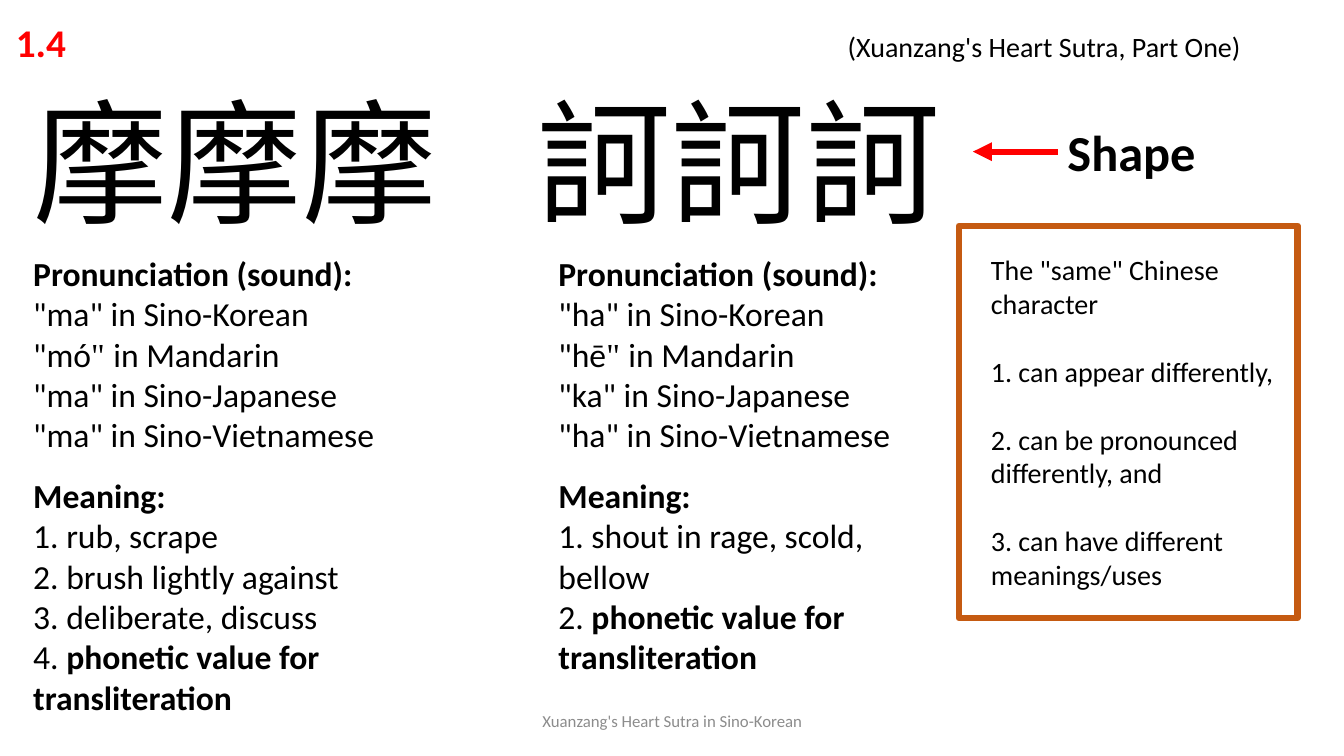
import pptx
import pptx.util
import pptx.dml.color
import pptx.enum.dml
import pptx.enum.shapes
import pptx.enum.text
import pptx.oxml
import pptx.oxml.ns
from dataclasses import dataclass

WIDTH, HEIGHT = pptx.util.Inches(13.33), pptx.util.Inches(7.5)


@dataclass(frozen=True)
class Theme:
    ink: str = "000000"
    red: str = "FF0000"
    frame: str = "C55A11"
    footer: str = "8C8C8C"
    font: str = "Calibri"
    accent_font: str = "Times New Roman"
    traditional_font: str = "Noto Sans CJK TC"
    japanese_font: str = "Noto Sans CJK JP"
    glyph_size: int = 96
    label_size: int = 36
    number_size: int = 28
    body_size: int = 24
    note_size: int = 20
    footer_size: int = 12
    stroke: float = 4.5


THEME = Theme()

# Left edges and top shared by the text columns, in percent of the slide
LEFT_COLUMN, MIDDLE_COLUMN, NOTE_COLUMN = 1.73, 40.81, 72.99
BODY_TOP = 32.8


def across(share):
    return round(WIDTH * share / 100)


def down(share):
    return round(HEIGHT * share / 100)


def area(left, top, width, height):
    return across(left), down(top), across(width), down(height)


def colour(value):
    return pptx.dml.color.RGBColor.from_string(value)


def add_run(paragraph, text, size, font=THEME.font, ink=THEME.ink, bold=False):
    run = paragraph.add_run()
    run.text = text
    run.font.name = font
    run.font.size = pptx.util.Pt(size)
    run.font.bold = bold
    run.font.color.rgb = colour(ink)


def add_text_area(slide, place, grow=True):
    box = slide.shapes.add_textbox(*area(*place))
    box.text_frame.word_wrap = True
    if grow:
        box.text_frame.auto_size = pptx.enum.text.MSO_AUTO_SIZE.SHAPE_TO_FIT_TEXT
    return box


def add_tab_stop(paragraph, inches):
    properties = paragraph._p.get_or_add_pPr()
    stops = pptx.oxml.parse_xml(
        f'<a:tabLst {pptx.oxml.ns.nsdecls("a")}>'
        f'<a:tab pos="{pptx.util.Inches(inches)}" algn="l"/></a:tabLst>')
    properties.append(stops)


def add_lines(frame, lines, size, gap_before):
    """Each line is a list of (text, run options); gap_before maps line number to points."""
    for number, runs in enumerate(lines):
        paragraph = frame.add_paragraph() if number else frame.paragraphs[0]
        if number in gap_before:
            paragraph.space_before = pptx.util.Pt(gap_before[number])
        for text, options in runs:
            add_run(paragraph, text, size, **options)


def add_heading(slide):
    heading = add_text_area(slide, (0.45, 1.33, 98.87, 7.73)).text_frame.paragraphs[0]
    heading.line_spacing = 1.07
    heading.space_after = pptx.util.Pt(8)
    add_tab_stop(heading, 8.25)
    add_run(heading, "1.4\t", THEME.number_size, ink=THEME.red, bold=True)
    add_run(heading, "(Xuanzang's Heart Sutra, Part One)", THEME.note_size)


def add_glyph_row(slide):
    row = add_text_area(slide, (LEFT_COLUMN, 9.87, 70.67, 22.93)).text_frame.paragraphs[0]
    add_tab_stop(row, 5)
    fonts = (THEME.font, THEME.traditional_font, THEME.japanese_font)
    for glyph, ending in (("摩", "\t"), ("訶", "")):
        for font in fonts:
            text = glyph + ending if font == fonts[-1] else glyph
            add_run(row, text, THEME.glyph_size, font=font)


def add_character_entry(slide, place, korean, mandarin, japanese, vietnamese, meanings):
    bold = {"bold": True}
    lines = [
        [("Pronunciation (sound):", bold)],
        [(f'"{korean}" in Sino-Korean', {})],
        [(f'"{mandarin}', {}), ('" ', {"font": THEME.accent_font}), ("in Mandarin", {})],
        [(f'"{japanese}" in Sino-Japanese', {})],
        [(f'"{vietnamese}" in Sino-Vietnamese', {})],
        [("Meaning:", bold)],
    ]
    lines += [[(f"{n}. {meaning}", {})] for n, meaning in enumerate(meanings, 1)]
    lines.append([(f"{len(meanings) + 1}. ", {}),
                  ("phonetic value for transliteration", bold)])
    entry = add_text_area(slide, place)
    add_lines(entry.text_frame, lines, THEME.body_size, {5: 14.6})


def add_note(slide):
    points = ("can appear differently,", "can be pronounced differently, and",
              "can have different meanings/uses")
    lines = [[('The "same" Chinese character', {})]]
    lines += [[(f"{n}. {point}", {})] for n, point in enumerate(points, 1)]
    note = add_text_area(slide, (NOTE_COLUMN, BODY_TOP, 22.88, 46.27))
    add_lines(note.text_frame, lines, THEME.note_size, dict.fromkeys((1, 2, 3), 24.4))

    border = slide.shapes.add_shape(
        pptx.enum.shapes.MSO_SHAPE.RECTANGLE, *area(71.34, 29.87, 25.21, 51.87))
    border.shadow.inherit = False
    border.fill.background()
    border.line.color.rgb = colour(THEME.frame)
    border.line.width = pptx.util.Pt(THEME.stroke)


def add_shape_label(slide):
    label = add_text_area(slide, (78.69, 15.33, 14.1, 9.47))
    add_run(label.text_frame.paragraphs[0], "Shape", THEME.label_size, bold=True)
    middle = label.top + label.height // 2
    arrow = slide.shapes.add_connector(
        pptx.enum.shapes.MSO_CONNECTOR.STRAIGHT, label.left, middle, across(72.39), middle)
    arrow.begin_connect(label, 1)
    arrow.line.color.rgb = colour(THEME.red)
    arrow.line.width = pptx.util.Pt(THEME.stroke)
    namespace = pptx.oxml.ns.nsdecls("a")
    arrow.line._get_or_add_ln().append(
        pptx.oxml.parse_xml(f'<a:tailEnd {namespace} type="triangle"/>'))
    arrow._element.spPr.append(pptx.oxml.parse_xml(f"<a:effectLst {namespace}/>"))


def add_footer(slide):
    footer = add_text_area(slide, (33.16, 92.67, 33.76, 5.33), grow=False).text_frame
    footer.vertical_anchor = pptx.enum.text.MSO_ANCHOR.MIDDLE
    footer.paragraphs[0].alignment = pptx.enum.text.PP_ALIGN.CENTER
    add_run(footer.paragraphs[0], "Xuanzang's Heart Sutra in Sino-Korean",
            THEME.footer_size, ink=THEME.footer)


def main():
    deck = pptx.Presentation()
    deck.slide_width, deck.slide_height = WIDTH, HEIGHT
    slide = deck.slides.add_slide(deck.slide_layouts[6])

    # Footer, heading and the large characters
    add_footer(slide)
    add_heading(slide)
    add_glyph_row(slide)

    # Sound and meaning of each character
    add_character_entry(slide, (LEFT_COLUMN, BODY_TOP, 29.33, 63.33),
                        "ma", "mó", "ma", "ma",
                        ("rub, scrape", "brush lightly against", "deliberate, discuss"))
    add_character_entry(slide, (MIDDLE_COLUMN, BODY_TOP, 28.13, 57.87),
                        "ha", "hē", "ka", "ha", ("shout in rage, scold, bellow",))

    # Framed note and the arrow to the characters
    add_note(slide)
    add_shape_label(slide)

    deck.save("out.pptx")


if __name__ == "__main__":
    main()
